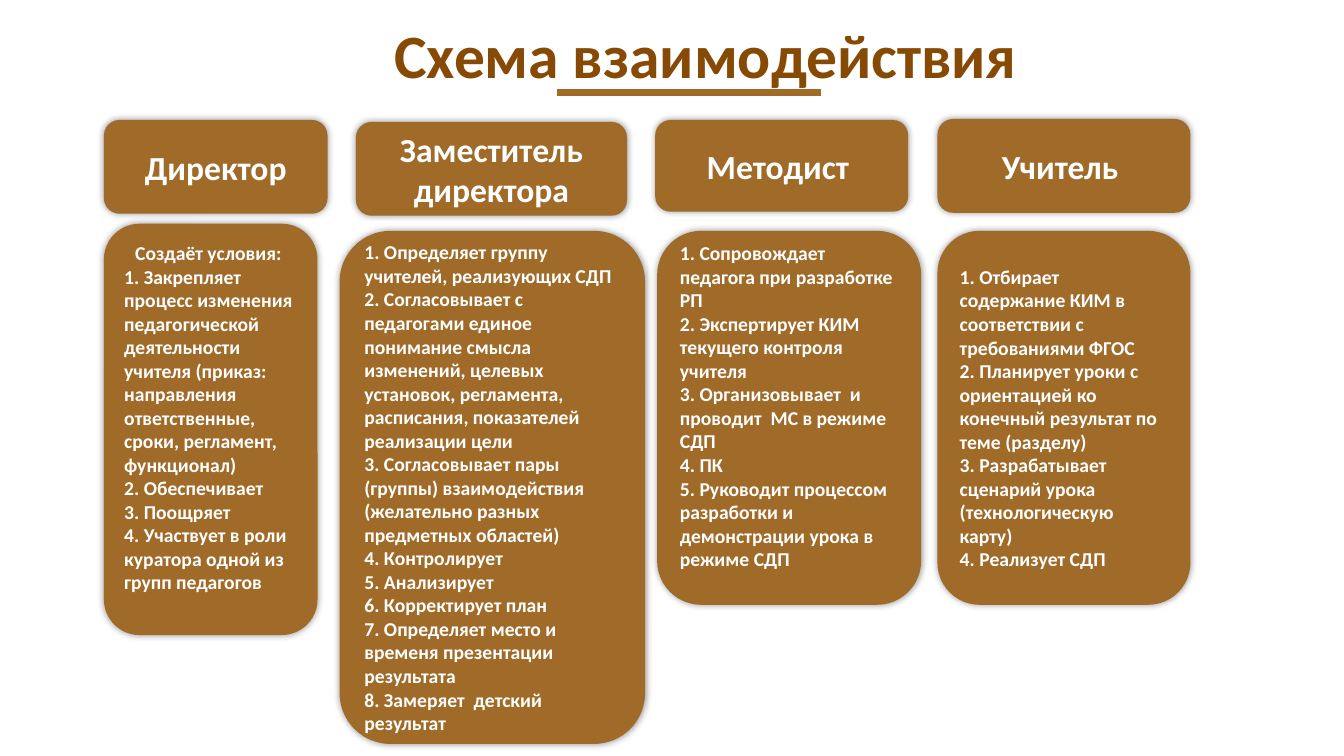
from dataclasses import dataclass

from lxml import etree
from pptx import Presentation
from pptx.dml.color import RGBColor
from pptx.enum.shapes import MSO_CONNECTOR, MSO_SHAPE
from pptx.enum.text import MSO_ANCHOR, MSO_AUTO_SIZE, PP_ALIGN
from pptx.oxml.ns import qn
from pptx.slide import Slide
from pptx.text.text import TextFrame
from pptx.util import Pt

ROUNDED = MSO_SHAPE.ROUNDED_RECTANGLE
STRAIGHT = MSO_CONNECTOR.STRAIGHT
MIDDLE = MSO_ANCHOR.MIDDLE
NO_AUTOFIT = MSO_AUTO_SIZE.NONE
LEFT, CENTER = PP_ALIGN.LEFT, PP_ALIGN.CENTER

COLOURS = {"title": "864A04", "card": "A06A29", "text": "FFFFFF", "shadow": "000000"}
FONT = "Calibri"
INSET = 3.6


@dataclass(frozen=True)
class Box:
    left: float
    top: float
    width: float
    height: float


@dataclass(frozen=True)
class Role:
    name: str
    name_box: Box
    duties: tuple[str, ...]
    duties_box: Box
    intro: str = ""
    bottom_inset: float = INSET


ROLES = (
    Role(
        "Директор",
        Box(74.2, 85.7, 159.8, 67),
        (
            "1. Закрепляет процесс изменения педагогической деятельности учителя "
            "(приказ: направления ответственные, сроки, регламент, функционал)",
            "2. Обеспечивает",
            "3. Поощряет",
            "4. Участвует в роли куратора одной из групп педагогов",
        ),
        Box(74.2, 159.8, 152.6, 293.8),
        intro="Создаёт условия: ",
        bottom_inset=20.6,
    ),
    Role(
        "Заместитель директора",
        Box(254.2, 87.1, 193.7, 67),
        (
            "1. Определяет группу учителей, реализующих СДП",
            "2. Согласовывает с педагогами единое понимание смысла изменений, "
            "целевых установок, регламента, расписания, показателей реализации цели",
            "3. Согласовывает пары (группы) взаимодействия "
            "(желательно разных предметных областей)",
            "4. Контролирует",
            "5. Анализирует",
            "6. Корректирует план",
            "7. Определяет место и временя презентации результата",
            "8. Замеряет  детский результат",
        ),
        Box(242.6, 164.9, 218.2, 366.5),
    ),
    Role(
        "Методист ",
        Box(468, 85.7, 180.7, 65.5),
        (
            "1. Сопровождает педагога при разработке РП",
            "2. Экспертирует КИМ текущего контроля учителя",
            "3. Организовывает  и проводит  МС в режиме СДП",
            "4. ПК",
            "5. Руководит процессом разработки и демонстрации урока в режиме СДП",
        ),
        Box(469.4, 164.9, 188.6, 267.1),
        bottom_inset=20.6,
    ),
    Role(
        "Учитель ",
        Box(669.6, 85, 180.7, 67),
        (
            "1. Отбирает содержание КИМ в соответствии с требованиями ФГОС",
            "2. Планирует уроки с ориентацией ко конечный результат по теме (разделу)",
            "3. Разрабатывает сценарий урока (технологическую карту)",
            "4. Реализует СДП",
        ),
        Box(669.6, 164.9, 180.7, 267.1),
    ),
)


def colour(part: str) -> RGBColor:
    return RGBColor.from_string(COLOURS[part])


def write(frame: TextFrame, lines: tuple[str, ...], size: float, part: str,
          align: PP_ALIGN) -> None:
    frame.word_wrap = True
    frame.auto_size = NO_AUTOFIT
    frame.vertical_anchor = MIDDLE
    frame.text = "\n".join(lines)
    for paragraph in frame.paragraphs:
        paragraph.alignment = align
        paragraph.font.name = FONT
        paragraph.font.size = Pt(size)
        paragraph.font.bold = True
        paragraph.font.color.rgb = colour(part)


def add_card(slide: Slide, box: Box, lines: tuple[str, ...], size: float,
             align: PP_ALIGN) -> TextFrame:
    card = slide.shapes.add_shape(
        ROUNDED, Pt(box.left), Pt(box.top), Pt(box.width), Pt(box.height))
    card.fill.solid()
    card.fill.fore_color.rgb = colour("card")
    card.line.fill.background()
    card.shadow.inherit = False
    effects = card._element.spPr.find(qn("a:effectLst"))
    glow = etree.SubElement(effects, qn("a:outerShdw"), blurRad=str(Pt(5)),
                            dist="0", dir="0", algn="ctr", rotWithShape="0")
    tint = etree.SubElement(glow, qn("a:srgbClr"), val=COLOURS["shadow"])
    etree.SubElement(tint, qn("a:alpha"), val="40000")
    write(card.text_frame, lines, size, "text", align)
    return card.text_frame


def add_role(slide: Slide, role: Role) -> None:
    add_card(slide, role.name_box, (role.name,), 24, CENTER)
    lines = (role.intro, *role.duties) if role.intro else role.duties
    duties = add_card(slide, role.duties_box, lines, 14, LEFT)
    duties.margin_bottom = Pt(role.bottom_inset)
    if role.intro:
        duties.paragraphs[0].alignment = CENTER


def add_title(slide: Slide) -> None:
    title = slide.shapes.title
    title.left, title.top = Pt(274.3), Pt(7.9)
    title.width, title.height = Pt(467.3), Pt(68.4)
    write(title.text_frame, ("Схема взаимодействия",), 44, "title", LEFT)
    title.text_frame.paragraphs[0].line_spacing = 0.9
    underline = slide.shapes.add_connector(
        STRAIGHT, Pt(398.2), Pt(66.2), Pt(586.1), Pt(66.2))
    underline.line.color.rgb = colour("card")
    underline.line.width = Pt(5)
    etree.SubElement(underline._element.spPr, qn("a:effectLst"))


def main() -> None:
    deck = Presentation()
    deck.slide_width, deck.slide_height = Pt(960), Pt(540)
    slide = deck.slides.add_slide(deck.slide_layouts[5])
    add_title(slide)
    for role in ROLES:
        add_role(slide, role)
    deck.save("out.pptx")


if __name__ == "__main__":
    main()
